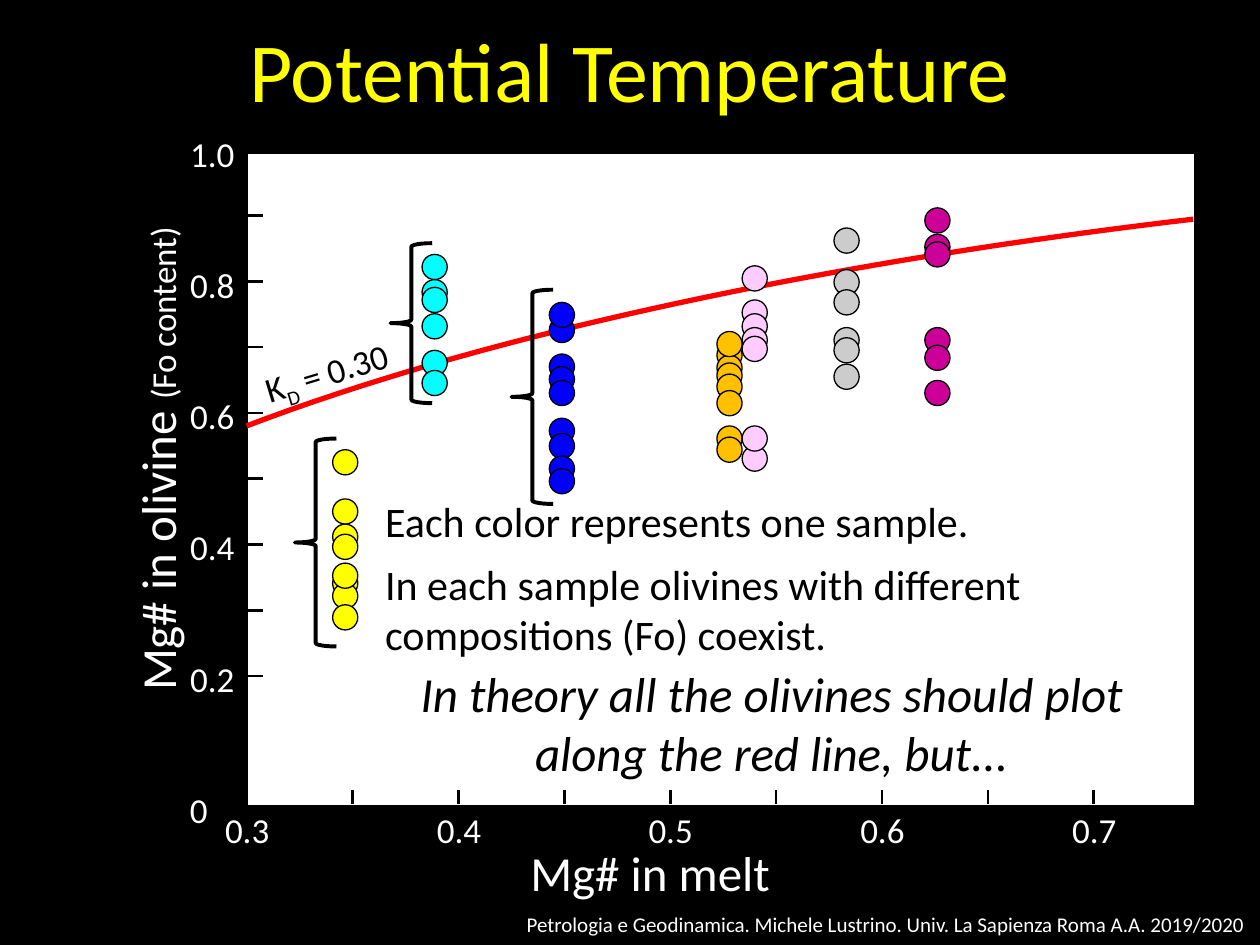
from pptx import Presentation
from pptx.dml.color import RGBColor
from pptx.enum.shapes import MSO_CONNECTOR, MSO_SHAPE
from pptx.enum.text import MSO_ANCHOR, PP_ALIGN
from pptx.oxml.ns import qn
from pptx.util import Pt
from lxml import etree

COLORS = {
    "black": "000000", "white": "FFFFFF", "red": "FF0000", "yellow": "FFFF00",
    "blue": "0000FF", "orange": "FFC000", "cyan": "00FFFF", "pink": "FFCCFF",
    "gray": "CCCCCC", "magenta": "CC0099",
}
FONT = "Calibri"
PLOT = (141, 87, 542, 374)
X_TICK, Y_TICK = 60.5, 37.6
TICK_LENGTH = 8.3
DOT = 14.4

# Each sample: color, left of its column, tops of its dots (within the plot)
SAMPLES = [
    ("blue", 172.9, [94.4, 115.3, 122.5, 130.4, 152, 160.7, 173.6, 180.8, 85.8]),
    ("orange", 268.7, [108.8, 116, 120.4, 102.4, 126.8, 136.2, 156.4, 162.8]),
    ("cyan", 100.2, [58.4, 72.8, 77.2, 92.3, 113.2, 124.7]),
    ("pink", 283.1, [64.9, 84.4, 92.3, 100.2, 105.2, 167.9, 156.4]),
    ("gray", 335.6, [43.3, 67.1, 78.6, 100.2, 106, 121.1]),
    ("magenta", 387.5, [31.8, 46.9, 51.2, 100.2, 110.3, 130.4]),
    ("yellow", 49.1, [198.1, 212.5, 218.3, 239.2, 246.4, 234.8, 258.6, 170]),
]
# Left, top and height of each brace (within the plot)
BRACES = [(27.5, 163.6, 118.8), (82.2, 52, 91.4), (151.3, 78.6, 122.4)]
BRACE_WIDTH = 23.8
# Control points of the red curve (within the plot)
CURVE = [(0, 156.4), (166.4, 93), (386, 56.3), (540.8, 38.3)]
CURVE_STEPS = 40


def rgb(name):
    return RGBColor.from_string(COLORS[name])


def add_text(slide, box, runs, color="white", align=PP_ALIGN.LEFT, wrap=False,
             italic=None, fill=None):
    """Place one paragraph; runs is a list of (text, size) pairs."""
    shape = slide.shapes.add_textbox(*map(Pt, box))
    if fill:
        shape.fill.solid()
        shape.fill.fore_color.rgb = rgb(fill)
    shape.text_frame.word_wrap = wrap
    paragraph = shape.text_frame.paragraphs[0]
    paragraph.alignment = align
    for text, size in runs:
        run = paragraph.add_run()
        run.text = text
        run.font.name = FONT
        run.font.size = Pt(size)
        run.font.italic = italic
        run.font.color.rgb = rgb(color)
    return shape


def add_shape(slide, kind, box, fill, line_width):
    shape = slide.shapes.add_shape(kind, *map(Pt, box))
    shape.shadow.inherit = False
    if fill:
        shape.fill.solid()
        shape.fill.fore_color.rgb = rgb(fill)
    else:
        shape.fill.background()
    shape.line.color.rgb = rgb("black")
    shape.line.width = Pt(line_width)
    return shape


def add_tick(slide, x1, y1, x2, y2):
    tick = slide.shapes.add_connector(MSO_CONNECTOR.STRAIGHT, Pt(x1), Pt(y1), Pt(x2), Pt(y2))
    tick.line.color.rgb = rgb("black")
    tick.line.width = Pt(1.5)
    etree.SubElement(tick._element.spPr, qn("a:effectLst"))


def add_axes(slide, box):
    left, top, width, height = box
    bottom = top + height
    add_shape(slide, MSO_SHAPE.RECTANGLE, box, "white", 1.5)

    # Ticks
    for number in range(8):
        x = left + (number + 1) * X_TICK
        y = top + 36.1 + number * Y_TICK
        add_tick(slide, x, bottom - 1.5, x, bottom - 1.5 - TICK_LENGTH)
        add_tick(slide, left + 0.8, y, left + 0.8 + TICK_LENGTH, y)

    # Tick labels
    for number, label in enumerate(["0.3", "0.4", "0.5", "0.6", "0.7"]):
        add_text(slide, (left - 19.5 + 2 * number * X_TICK, bottom - 2.4, 40.5, 31.5),
                 [(label, 20)])
    for number, label in enumerate(["1.0", "0.8", "0.6", "0.4", "0.2", "0"]):
        label_width = 24.5 if label == "0" else 40.5
        add_text(slide, (left - 39.5, top - 15 + 75 * number, label_width, 31.5),
                 [(label, 20)])

    # Axis titles
    add_text(slide, (left + 155, bottom + 17, 152.6, 41.2), [("Mg# in melt", 28)])
    title = add_text(slide, (left - 192.8, top + 152.8, 283, 41.2),
                     [("Mg# in olivine ", 28), ("(Fo content)", 20)])
    title.rotation = 270


def add_comments(slide, box):
    left, top, width, height = box
    add_text(slide, (left + 57.7, top + 288.8, 484.5, 75),
             [("In theory all the olivines should plot along the red line, but...", 28)],
             "black", PP_ALIGN.CENTER, True, italic=True)
    add_text(slide, (left + 72, top + 192.4, 396.7, 36),
             [("Each color represents one sample.", 24)], "black", wrap=True, fill="white")
    add_text(slide, (left + 72, top + 228.4, 467.3, 65.4),
             [("In each sample olivines with different compositions (Fo) coexist.", 24)],
             "black", wrap=True, fill="white")


def add_curve(slide, box):
    left, top, width, height = box
    label = add_text(slide, (left + 2.3, top + 109.6, 88.6, 31.5),
                     [("K", 20), ("D", 20), (" = 0.30", 20)], "black")
    label.rotation = 343.1
    subscript = label.text_frame.paragraphs[0].runs[1]
    subscript.font._element.set("baseline", "-25000")

    # Points along the cubic curve
    points = []
    for step in range(CURVE_STEPS + 1):
        t = step / CURVE_STEPS
        weights = [(1 - t) ** 3, 3 * t * (1 - t) ** 2, 3 * t ** 2 * (1 - t), t ** 3]
        x = sum(weight * point[0] for weight, point in zip(weights, CURVE))
        y = sum(weight * point[1] for weight, point in zip(weights, CURVE))
        points.append((Pt(left + x), Pt(top + y)))
    builder = slide.shapes.build_freeform(*points[0])
    builder.add_line_segments(points[1:], close=False)
    curve = builder.convert_to_shape()
    curve.shadow.inherit = False
    curve.fill.background()
    curve.line.color.rgb = rgb("red")
    curve.line.width = Pt(3)


def add_samples(slide, box):
    left, top, width, height = box
    for color, x, tops in SAMPLES:
        for y in tops:
            add_shape(slide, MSO_SHAPE.OVAL, (left + x, top + y, DOT, DOT), color, 0.75)
    for x, y, brace_height in BRACES:
        add_shape(slide, MSO_SHAPE.LEFT_BRACE,
                  (left + x, top + y, BRACE_WIDTH, brace_height), None, 2.25)


def main():
    presentation = Presentation()
    presentation.slide_width, presentation.slide_height = Pt(720), Pt(540)
    slide = presentation.slides.add_slide(presentation.slide_layouts[6])
    slide.background.fill.solid()
    slide.background.fill.fore_color.rgb = rgb("black")

    # Footer and title
    footer = add_text(
        slide, (285.8, 517, 432.7, 21.6),
        [("Petrologia e Geodinamica. Michele Lustrino. Univ. La Sapienza Roma A.A. 2019/2020", 12)],
        align=PP_ALIGN.RIGHT, wrap=True)
    footer.text_frame.vertical_anchor = MSO_ANCHOR.MIDDLE
    add_text(slide, (0, 7.2, 720, 64.8), [("Potential Temperature", 48)],
             "yellow", PP_ALIGN.CENTER, True)

    # Diagram
    for add_part in (add_axes, add_comments, add_curve, add_samples):
        add_part(slide, PLOT)
    presentation.save("out.pptx")


if __name__ == "__main__":
    main()
